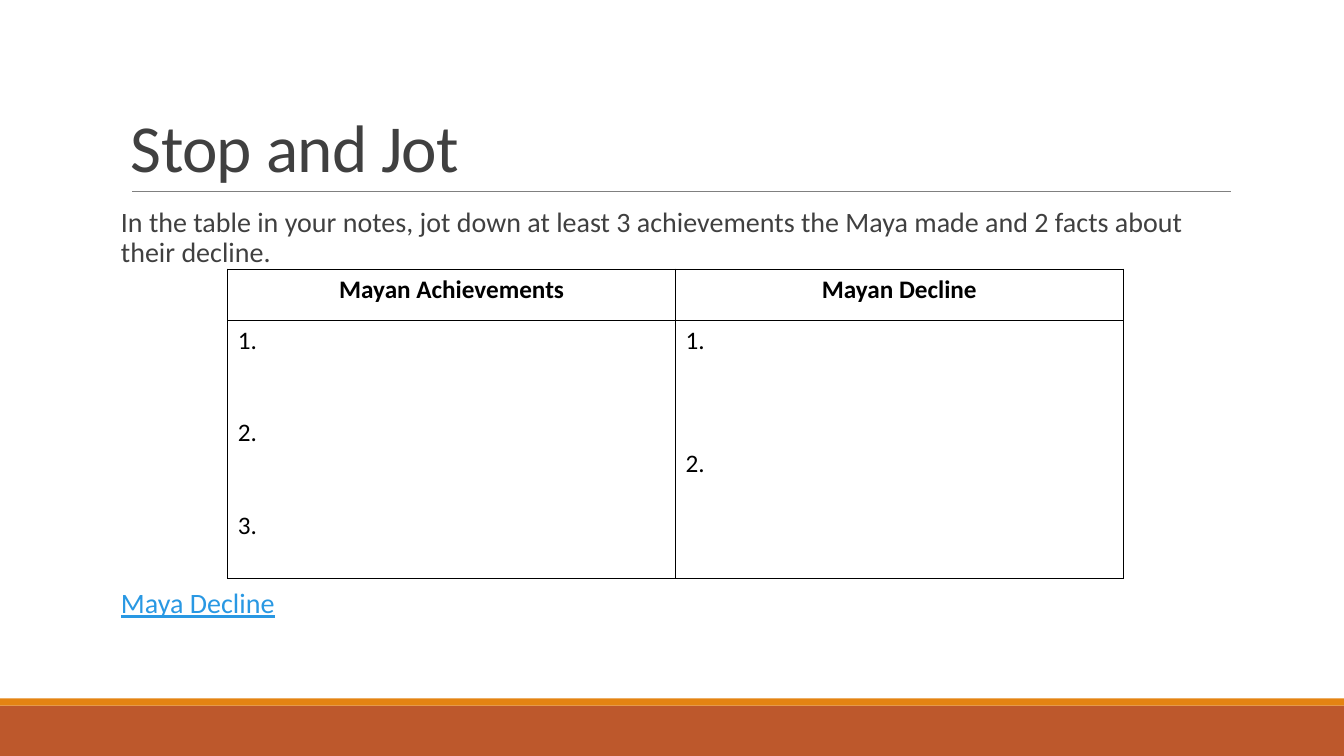
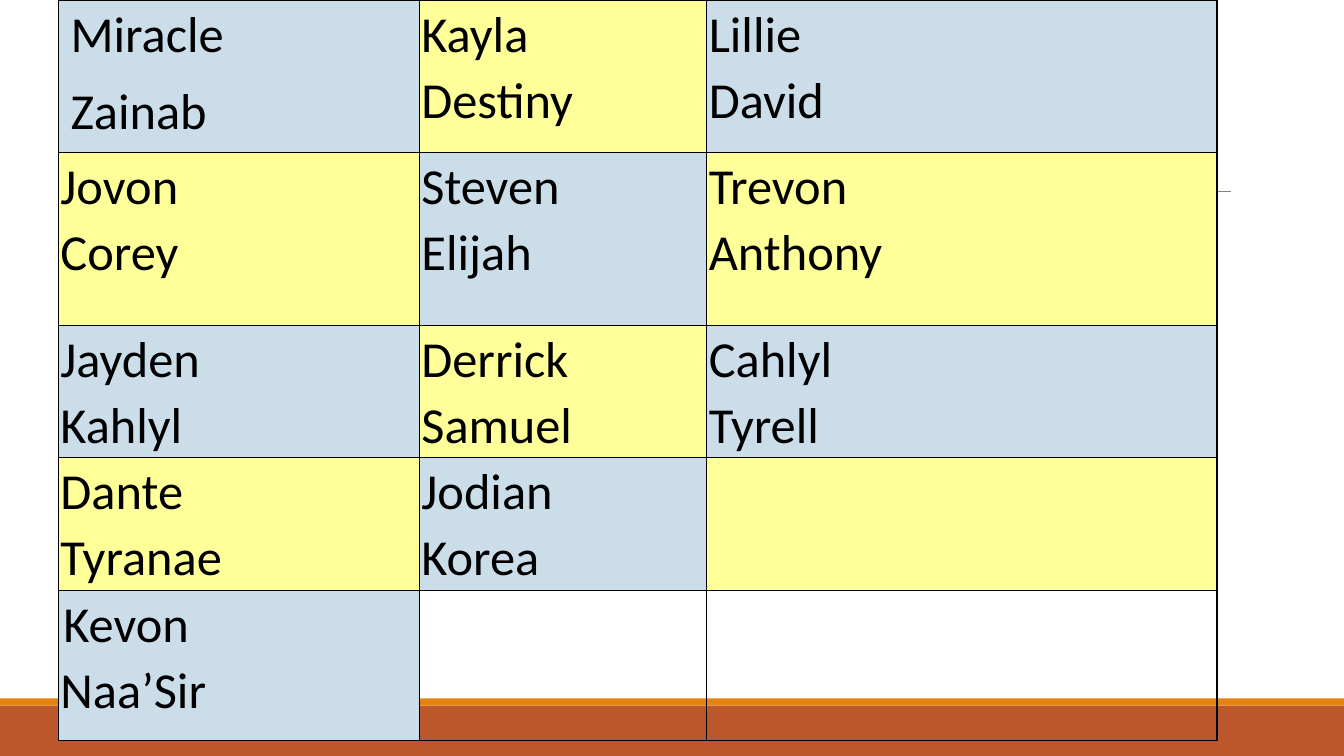
"""Build the two class slides: a note-taking table and a seating grid."""
from dataclasses import dataclass, field

from lxml import etree
from pptx import Presentation
from pptx.dml.color import RGBColor
from pptx.enum.shapes import MSO_CONNECTOR, MSO_SHAPE
from pptx.enum.text import MSO_ANCHOR, PP_ALIGN
from pptx.oxml.ns import qn
from pptx.slide import Slide
from pptx.table import Table, _Cell
from pptx.text.text import TextFrame
from pptx.util import Inches, Pt

RECT = MSO_SHAPE.RECTANGLE
STRAIGHT = MSO_CONNECTOR.STRAIGHT
TOP, BOTTOM = MSO_ANCHOR.TOP, MSO_ANCHOR.BOTTOM
CENTER = PP_ALIGN.CENTER

BLACK = RGBColor(0x00, 0x00, 0x00)
DARK = RGBColor(0x40, 0x40, 0x40)
GRAY = RGBColor(0x80, 0x80, 0x80)
RUST = RGBColor(0xBD, 0x58, 0x2C)
AMBER = RGBColor(0xE4, 0x83, 0x12)
LINK = RGBColor(0x29, 0x98, 0xE3)
BLUE = RGBColor(0xCC, 0xDD, 0xEA)
YELLOW = RGBColor(0xFF, 0xFF, 0x99)

FACE = "Calibri"
WIDTH, HEIGHT = 13.33, 7.5
TITLE = {"size": Pt(48)}
BODY = {"size": Pt(20)}
URL = {"size": Pt(20), "underline": True}
HEAD = {"size": Pt(18), "bold": True}
ITEM = {"size": Pt(18), "bold": False}
NAME = {"size": Pt(36), "bold": False}


@dataclass
class Band:
    """A full-width footer stripe."""
    top: float
    height: float
    color: RGBColor


@dataclass
class Line:
    """One paragraph with its font and paragraph formats."""
    text: str
    font: dict
    color: RGBColor = BLACK
    para: dict = field(default_factory=dict)
    track: int = 0
    indent: float = 0


BANDS = (Band(7, 0.5, RUST), Band(6.93, 0.07, AMBER))

NAMES = (
    (("Miracle", "Zainab"), ("Kayla", "Destiny"), ("Lillie", "David")),
    (("Jovon", "Corey"), ("Steven", "Elijah"), ("Trevon", "Anthony")),
    (("Jayden", "Kahlyl"), ("Derrick", "Samuel"), ("Cahlyl", "Tyrell")),
    (("Dante", "Tyranae"), ("Jodian", "Korea"), ()),
    (("Kevon", "Naa’Sir"), (), ()),
)


def style(item: object, formats: dict) -> None:
    """Set each format value on the item."""
    for key, value in formats.items():
        setattr(item, key, value)


def write(frame: TextFrame, lines: list[Line]) -> None:
    """Write the lines as paragraphs of the frame."""
    for index, line in enumerate(lines):
        para = frame.add_paragraph() if index else frame.paragraphs[0]
        style(para, line.para)
        if line.indent:
            para._p.get_or_add_pPr().set("indent", str(Inches(line.indent)))
        run = para.add_run()
        run.text = line.text
        style(run.font, {"name": FACE, **line.font})
        run.font.color.rgb = line.color
        if line.track:
            run._r.get_or_add_rPr().set("spc", str(line.track))


def add_text(slide: Slide, box: tuple, lines: list[Line], formats: dict) -> None:
    """Add a wrapped text box."""
    frame = slide.shapes.add_textbox(*map(Inches, box)).text_frame
    style(frame, {"word_wrap": True, **formats})
    write(frame, lines)


def add_base(deck: Presentation) -> Slide:
    """Add a blank slide with the footer bands and the title rule."""
    slide = deck.slides.add_slide(deck.slide_layouts[6])
    for band in BANDS:
        box = (0, band.top, WIDTH, band.height)
        shape = slide.shapes.add_shape(RECT, *map(Inches, box))
        shape.shadow.inherit = False
        shape.fill.solid()
        shape.fill.fore_color.rgb = band.color
        shape.line.fill.background()
    ends = map(Inches, (1.31, 1.9, 12.21, 1.9))
    rule = slide.shapes.add_connector(STRAIGHT, *ends)
    rule.line.color.rgb = GRAY
    rule.line.width = Pt(0.5)
    etree.SubElement(rule._element.spPr, qn("a:effectLst"))
    return slide


def frame_cell(cell: _Cell) -> None:
    """Draw a black one-point border and clear the fill."""
    props = cell._tc.get_or_add_tcPr()
    for side in ("lnL", "lnR", "lnT", "lnB"):
        edge = etree.SubElement(props, qn(f"a:{side}"), w=str(Pt(1)))
        fill = etree.SubElement(edge, qn("a:solidFill"))
        etree.SubElement(fill, qn("a:srgbClr"), val=str(BLACK))
    cell.fill.background()


def add_grid(slide: Slide, left: float, top: float, cols: tuple, rows: tuple) -> Table:
    """Add a plain bordered table with the given column and row sizes."""
    box = map(Inches, (left, top, sum(cols), sum(rows)))
    table = slide.shapes.add_table(len(rows), len(cols), *box).table
    style(table, {"first_row": False, "horz_banding": False})
    for col, width in zip(table.columns, cols):
        col.width = Inches(width)
    for row, height in zip(table.rows, rows):
        row.height = Inches(height)
    for cell in table.iter_cells():
        frame_cell(cell)
    return table


def add_notes(deck: Presentation) -> None:
    """Build the slide with the note-taking table."""
    slide = add_base(deck)
    title = Line("Stop and Jot", TITLE, DARK, {"line_spacing": 0.85}, -50)
    add_text(slide, (1.2, 0.31, 11, 1.59), [title], {"vertical_anchor": BOTTOM})
    task = ("In the table in your notes, jot down at least 3 achievements "
            "the Maya made and 2 facts about their decline.")
    body = [
        Line(task, BODY, DARK, {"line_spacing": 0.9, "space_after": Pt(2)}),
        Line("Maya Decline", URL, LINK,
             {"line_spacing": 0.9, "space_before": Pt(227)}),
    ]
    add_text(slide, (1.2, 2.02, 11, 4.4), body,
             {"margin_left": 0, "margin_right": 0, "vertical_anchor": TOP})
    table = add_grid(slide, 2.26, 2.67, (4.44, 4.44), (0.51, 2.56))
    heads = (("Mayan Achievements", 3, 44), ("Mayan Decline", 2, 66))
    for col, (head, count, gap) in enumerate(heads):
        write(table.cell(0, col).text_frame,
              [Line(head, HEAD, para={"alignment": CENTER})])
        items = [Line(f"{num}.", ITEM, para={"space_before": Pt(gap if num > 1 else 0)})
                 for num in range(1, count + 1)]
        write(table.cell(1, col).text_frame, items)


def add_seats(deck: Presentation) -> None:
    """Build the slide with the grid of paired names."""
    slide = add_base(deck)
    table = add_grid(slide, 0.58, 0, (3.58, 2.85, 5.06),
                     (1.51, 1.72, 1.31, 1.32, 1.49))
    last = len(NAMES) - 1
    for row, pairs in enumerate(NAMES):
        for col, pair in enumerate(pairs):
            cell = table.cell(row, col)
            first = row == col == 0
            side = Inches(0.12 if first else 0.02)
            style(cell, {"margin_left": side, "margin_right": side,
                         "margin_top": 0, "margin_bottom": 0})
            if row < last or pair:
                cell.fill.solid()
                cell.fill.fore_color.rgb = YELLOW if (row + col) % 2 else BLUE
            para = {"line_spacing": 1.07, "space_after": Pt(8 if first else 0)}
            lines = [Line(name, NAME, para=para,
                          indent=0.03 if name == "Kevon" else 0) for name in pair]
            write(cell.text_frame, lines)


def main() -> None:
    """Build and save the deck."""
    deck = Presentation()
    style(deck, {"slide_width": Inches(WIDTH), "slide_height": Inches(HEIGHT)})
    add_notes(deck)
    add_seats(deck)
    deck.save("out.pptx")


if __name__ == "__main__":
    main()
